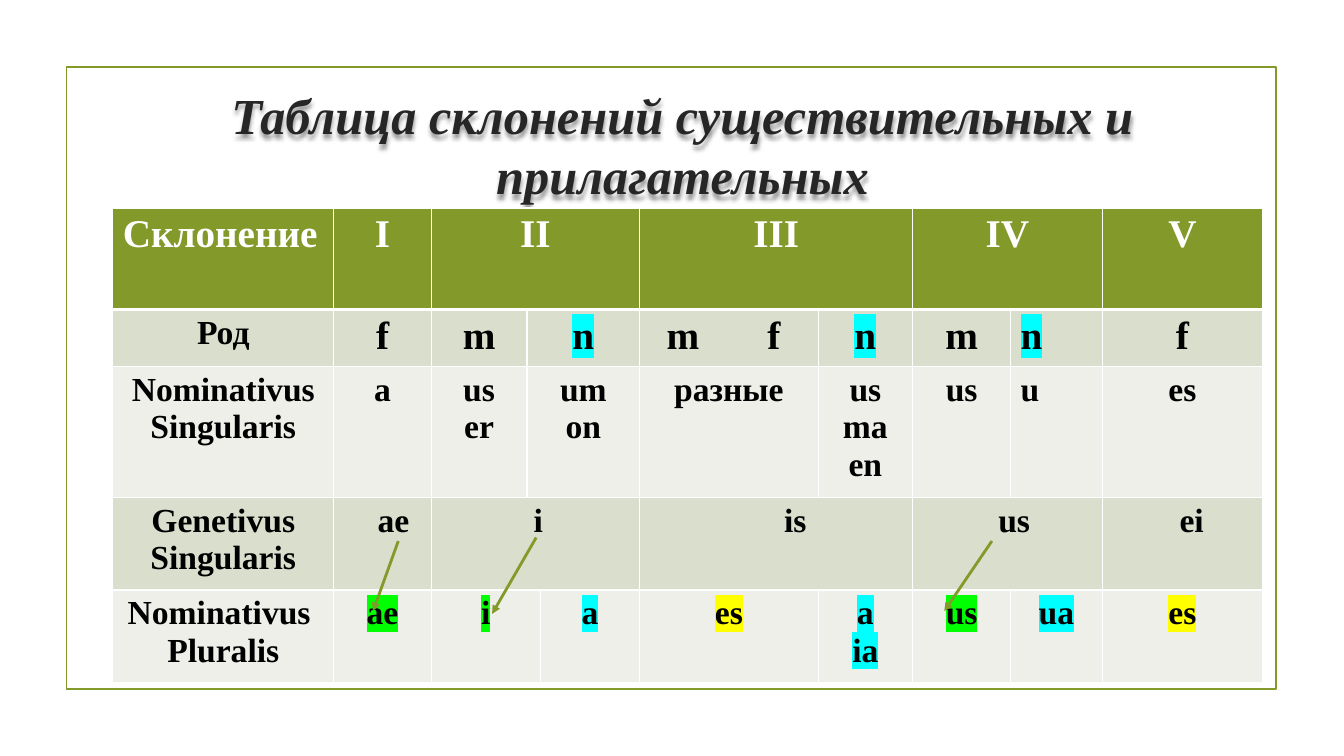
from lxml import etree
from pptx import Presentation
from pptx.dml.color import RGBColor
from pptx.enum.shapes import MSO_CONNECTOR, MSO_SHAPE
from pptx.enum.text import MSO_ANCHOR, MSO_AUTO_SIZE, PP_ALIGN
from pptx.oxml.ns import qn
from pptx.util import Pt

CENTER, LEFT = PP_ALIGN.CENTER, PP_ALIGN.LEFT
MIDDLE = MSO_ANCHOR.MIDDLE
NO_AUTOFIT = MSO_AUTO_SIZE.NONE
RECTANGLE, STRAIGHT = MSO_SHAPE.RECTANGLE, MSO_CONNECTOR.STRAIGHT

OLIVE = RGBColor(0x83, 0x99, 0x2A)
DARK_BAND = RGBColor(0xD9, 0xDE, 0xCD)
LIGHT_BAND = RGBColor(0xED, 0xEF, 0xE8)
CHARCOAL = RGBColor(0x26, 0x26, 0x26)
WHITE = RGBColor(0xFF, 0xFF, 0xFF)
BLACK = RGBColor(0, 0, 0)
CYAN = RGBColor(0, 0xFF, 0xFF)
GREEN = RGBColor(0, 0xFF, 0)
YELLOW = RGBColor(0xFF, 0xFF, 0)

FONT = "Times New Roman"
TITLE = "Таблица склонений существительных и прилагательных"
GENDER_LABEL = "Род"
GENDER_TABS = (12, 84)

# Each cell: text, columns spanned, highlight, left indent (None centres it)
DECLENSIONS = [
    [("Склонение", 1, None, 0), ("I", 1, None, None), ("II", 3, None, None),
     ("III", 2, None, None), ("IV", 2, None, None), ("V", 1, None, None)],
    [(GENDER_LABEL, 1, None, None), ("f", 1, None, None), ("m", 1, None, None),
     ("n", 2, CYAN, None), ("\tm\tf", 1, None, 0), ("n", 1, CYAN, None),
     ("m", 1, None, None), ("n", 1, CYAN, 0), ("f", 1, None, None)],
    [("Nominativus\nSingularis", 1, None, None), ("a", 1, None, None),
     ("us\ner", 1, None, None), ("um\non", 2, None, None),
     ("разные", 1, None, None), ("us\nma\nen", 1, None, None),
     ("us", 1, None, None), ("u", 1, None, 0), ("es", 1, None, None)],
    [("Genetivus\nSingularis", 1, None, None), ("ae", 1, None, 24),
     ("i", 3, None, 66), ("is", 2, None, 96), ("us", 2, None, 54),
     ("ei", 1, None, 48)],
    [("Nominativus \nPluralis", 1, None, None), ("ae", 1, GREEN, None),
     ("i", 2, GREEN, None), ("a", 1, CYAN, None), ("es", 1, YELLOW, None),
     ("a\nia", 1, CYAN, None), ("us", 1, GREEN, None), ("ua", 1, CYAN, None),
     ("es", 1, YELLOW, None)],
]
COLUMN_WIDTHS = [158, 69.5, 68.5, 9.5, 71, 127.5, 67.5, 70, 65.5, 114.5]
ROW_HEIGHTS = [72.5, 41, 93.5, 66, 66]
ROW_STYLES = [(OLIVE, WHITE, 28), (DARK_BAND, BLACK, 28), (LIGHT_BAND, BLACK, 24),
              (DARK_BAND, BLACK, 24), (LIGHT_BAND, BLACK, 24)]
ENDING_ARROWS = [(383, 384, 351.5, 438.5), (708.5, 386.5, 674.5, 436.5),
                 (284.5, 386.5, 266.5, 436.5)]


def apply(target, values):
    for name, value in values.items():
        setattr(target, name, value)


def style_font(font, color, **values):
    apply(font, {"name": FONT, "bold": True, **values})
    font.color.rgb = color


def add_borders(cell, row):
    widths = {"L": 1, "R": 1, "T": 3 if row == 1 else 1, "B": 3 if row == 0 else 1}
    tc_pr = cell._tc.get_or_add_tcPr()
    for side, width in widths.items():
        border = etree.SubElement(tc_pr, qn(f"a:ln{side}"), w=str(Pt(width)))
        fill = etree.SubElement(border, qn("a:solidFill"))
        etree.SubElement(fill, qn("a:srgbClr"), val=str(WHITE))


def highlight_run(run, color):
    mark = etree.Element(qn("a:highlight"))
    etree.SubElement(mark, qn("a:srgbClr"), val=str(color))
    run.font._element.find(qn("a:solidFill")).addnext(mark)


def write_ending(cell, text, highlight, indent, color, size):
    cell.text = text
    for paragraph in cell.text_frame.paragraphs:
        paragraph.alignment = CENTER if indent is None else LEFT
        p_pr = paragraph._p.get_or_add_pPr()
        if indent:
            p_pr.set("marL", str(Pt(indent)))
        if "\t" in text:
            tabs = etree.SubElement(p_pr, qn("a:tabLst"))
            for stop in GENDER_TABS:
                etree.SubElement(tabs, qn("a:tab"), pos=str(Pt(stop)), algn="l")
        for run in paragraph.runs:
            style_font(run.font, color, size=Pt(size))
            if highlight is not None:
                highlight_run(run, highlight)


def add_title(slide):
    title = slide.shapes.title
    apply(title, {"left": Pt(74), "top": Pt(57), "width": Pt(827), "height": Pt(92)})
    frame = title.text_frame
    apply(frame, {"text": TITLE, "word_wrap": True, "auto_size": NO_AUTOFIT,
                  "vertical_anchor": MIDDLE})
    paragraph = frame.paragraphs[0]
    apply(paragraph, {"alignment": CENTER, "line_spacing": 1.0})
    style_font(paragraph.runs[0].font, CHARCOAL, size=Pt(36), italic=True)
    effects = etree.SubElement(title._element.spPr, qn("a:effectLst"))
    shadow = etree.SubElement(effects, qn("a:outerShdw"), blurRad=str(Pt(3)),
                              dist=str(Pt(3)), dir="5400000", algn="t", rotWithShape="0")
    tint = etree.SubElement(shadow, qn("a:srgbClr"), val=str(BLACK))
    etree.SubElement(tint, qn("a:alpha"), val="40000")


def add_declension_table(slide):
    table = slide.shapes.add_table(
        len(ROW_HEIGHTS), len(COLUMN_WIDTHS), Pt(80.5), Pt(148.5),
        Pt(sum(COLUMN_WIDTHS)), Pt(sum(ROW_HEIGHTS))).table
    for column, width in zip(table.columns, COLUMN_WIDTHS):
        column.width = Pt(width)
    for row, height in zip(table.rows, ROW_HEIGHTS):
        row.height = Pt(height)
    for r, (endings, (band, color, size)) in enumerate(zip(DECLENSIONS, ROW_STYLES)):
        for c in range(len(COLUMN_WIDTHS)):
            cell = table.cell(r, c)
            add_borders(cell, r)
            cell.fill.solid()
            cell.fill.fore_color.rgb = band
        c = 0
        for text, span, highlight, indent in endings:
            cell = table.cell(r, c)
            if span > 1:
                cell.merge(table.cell(r, c + span - 1))
            text_size = 24 if text == GENDER_LABEL else size
            write_ending(cell, text, highlight, indent, color, text_size)
            c += span


def add_ending_arrows(slide):
    for ends in ENDING_ARROWS:
        arrow = slide.shapes.add_connector(STRAIGHT, *map(Pt, ends))
        arrow.line.color.rgb = OLIVE
        arrow.line.width = Pt(2)
        etree.SubElement(arrow.line._get_or_add_ln(), qn("a:tailEnd"), type="triangle")
        etree.SubElement(arrow._element.spPr, qn("a:effectLst"))


def main():
    deck = Presentation()
    apply(deck, {"slide_width": Pt(960), "slide_height": Pt(540)})
    slide = deck.slides.add_slide(deck.slide_layouts[5])
    border = slide.shapes.add_shape(RECTANGLE, Pt(47.5), Pt(48), Pt(864), Pt(444))
    border.shadow.inherit = False
    border.fill.background()
    border.line.color.rgb = OLIVE
    border.line.width = Pt(1.25)
    add_title(slide)
    add_declension_table(slide)
    add_ending_arrows(slide)
    deck.save("out.pptx")


if __name__ == "__main__":
    main()
